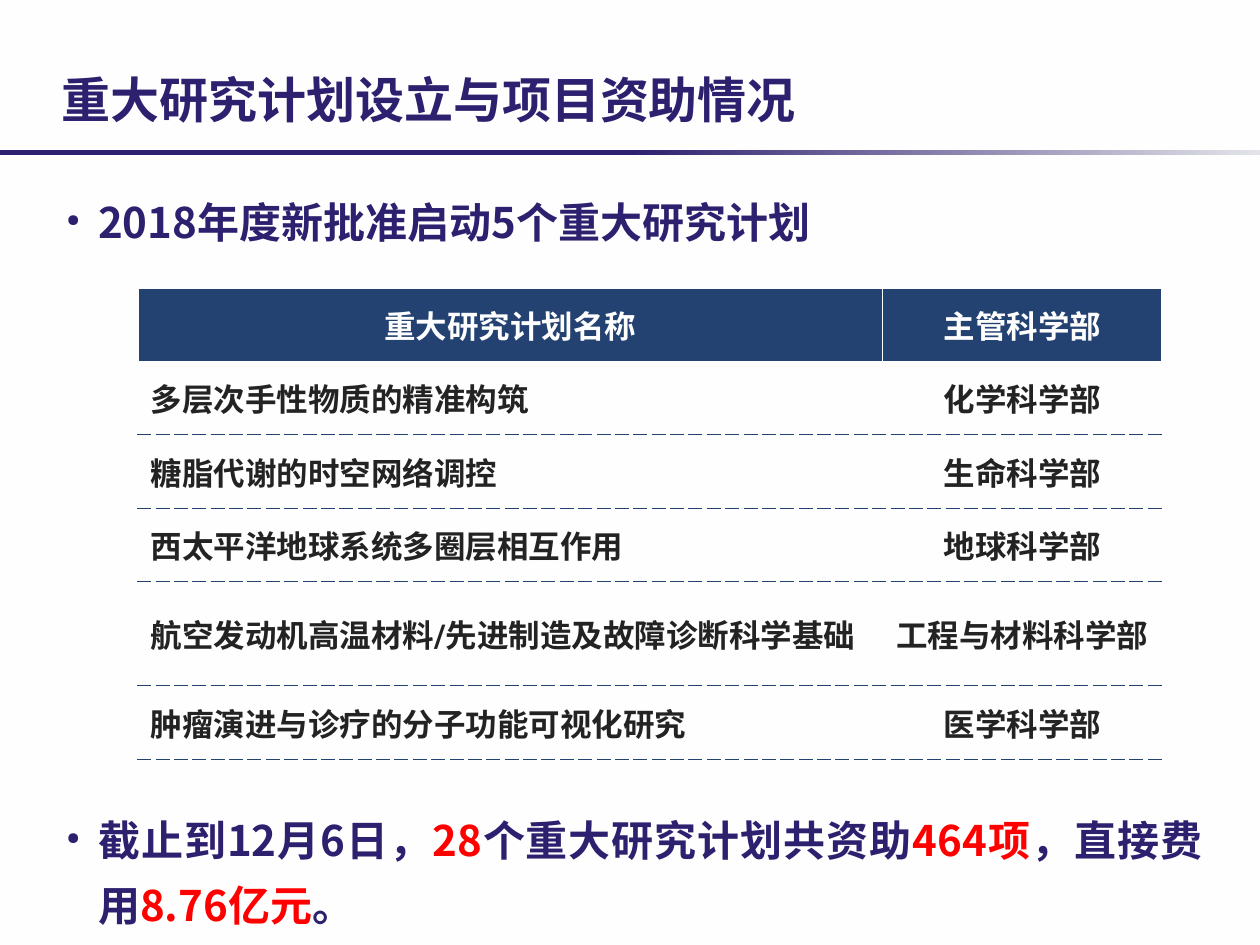
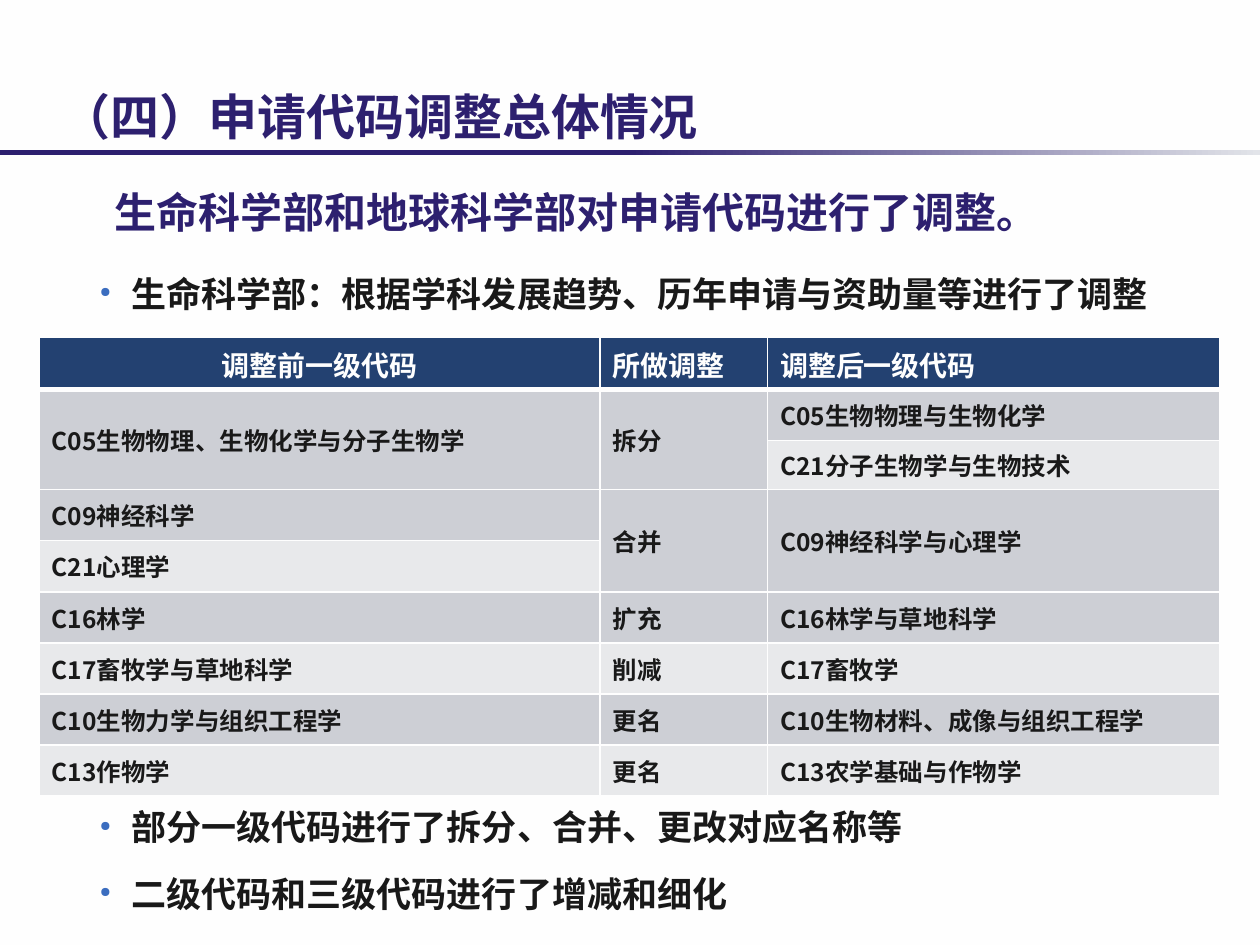
from dataclasses import dataclass

from lxml.etree import SubElement
from pptx import Presentation
from pptx.dml.color import RGBColor
from pptx.enum.shapes import MSO_SHAPE
from pptx.enum.text import MSO_ANCHOR, PP_ALIGN
from pptx.oxml.ns import qn
from pptx.util import Pt


@dataclass(frozen=True)
class Theme:
    paper: str = "FEFEFE"
    purple: str = "2D206F"
    band_end: str = "E2E4E9"
    navy: str = "234171"
    red: str = "FF0000"
    blue: str = "3B6DBF"
    ink: str = "191919"
    plan_ink: str = "232323"
    stripe_dark: str = "CDCFD5"
    stripe_light: str = "E8E9EB"
    font: str = "Noto Sans CJK SC"
    table_font: str = "Roboto"
    title_size: int = 28
    lead_size: int = 24
    point_size: int = 20
    plan_size: int = 18
    code_header_size: int = 16
    code_size: int = 14
    lead_spacing: float = 1.3
    point_spacing: float = 1.25


THEME = Theme()
LEFT, WIDTH = 31, 663

PLANS = [
    ("重大研究计划名称", "主管科学部"),
    ("多层次手性物质的精准构筑", "化学科学部"),
    ("糖脂代谢的时空网络调控", "生命科学部"),
    ("西太平洋地球系统多圈层相互作用", "地球科学部"),
    ("航空发动机高温材料/先进制造及故障诊断科学基础", "工程与材料科学部"),
    ("肿瘤演进与诊疗的分子功能可视化研究", "医学科学部"),
]
TWO_LINE_PLAN = 4

# None continues the cell above.
CODES = [
    ("调整前一级代码", "所做调整", "调整后一级代码"),
    ("C05生物物理、生物化学与分子生物学", "拆分", "C05生物物理与生物化学"),
    (None, None, "C21分子生物学与生物技术"),
    ("C09神经科学", "合并", "C09神经科学与心理学"),
    ("C21心理学", None, None),
    ("C16林学", "扩充", "C16林学与草地科学"),
    ("C17畜牧学与草地科学", "削减", "C17畜牧学"),
    ("C10生物力学与组织工程学", "更名", "C10生物材料、成像与组织工程学"),
    ("C13作物学", "更名", "C13农学基础与作物学"),
]


def rgb(color):
    return RGBColor.from_string(color)


def add_bullet(para, color, indent):
    """Hang a small round bullet 18 pt before the text at indent."""
    properties = para._p.get_or_add_pPr()
    properties.set("marL", str(Pt(indent)))
    properties.set("indent", str(Pt(-18)))
    bullet_color = SubElement(properties, qn("a:buClr"))
    SubElement(bullet_color, qn("a:srgbClr"), val=color)
    SubElement(properties, qn("a:buSzPct"), val="40000")
    SubElement(properties, qn("a:buChar"), char="●")


def write(para, text, *, size, color=THEME.ink, font=THEME.font,
          align=PP_ALIGN.LEFT, spacing=None, before=0):
    """Fill a paragraph with text, or with (text, color) spans."""
    para.alignment = align
    para.space_before = Pt(before)
    if spacing:
        para.line_spacing = spacing
    spans = [(text, color)] if isinstance(text, str) else text
    for words, span_color in spans:
        span = para.add_run()
        span.text = words
        span.font.size = Pt(size)
        span.font.bold = True
        span.font.color.rgb = rgb(span_color)
        span.font.name = font
        SubElement(span._r.get_or_add_rPr(), qn("a:ea"), typeface=THEME.font)


def add_box(page, top, height, left=LEFT, width=WIDTH):
    box = page.shapes.add_textbox(Pt(left), Pt(top), Pt(width), Pt(height))
    box.text_frame.word_wrap = True
    return box.text_frame


def add_bullets(page, top, height, items, *, bullet, indent, **style):
    frame = add_box(page, top, height)
    for index, item in enumerate(items):
        para = frame.add_paragraph() if index else frame.paragraphs[0]
        add_bullet(para, bullet, indent)
        write(para, item, align=PP_ALIGN.JUSTIFY, before=8 if index else 0, **style)


def add_page(deck, title, title_bottom):
    """Add a page with its background, title and gradient band."""
    page = deck.slides.add_slide(deck.slide_layouts[6])
    page.background.fill.solid()
    page.background.fill.fore_color.rgb = rgb(THEME.paper)

    band = page.shapes.add_shape(MSO_SHAPE.RECTANGLE, 0, Pt(85.7), deck.slide_width, Pt(2.9))
    band.shadow.inherit = False
    band.line.fill.background()
    band.fill.gradient()
    band.fill.gradient_angle = 0
    stops = zip(band.fill.gradient_stops, (0.5, 1), (THEME.purple, THEME.band_end))
    for stop, position, color in stops:
        stop.position = position
        stop.color.rgb = rgb(color)

    frame = add_box(page, title_bottom - 64, 64)
    frame.vertical_anchor = MSO_ANCHOR.BOTTOM
    frame.margin_left = frame.margin_right = Pt(4.3)
    frame.margin_top = frame.margin_bottom = 0
    write(frame.paragraphs[0], title, size=THEME.title_size, color=THEME.purple)
    return page


def set_border(cell, side, color, width=1, dash="solid"):
    line = SubElement(cell._tc.get_or_add_tcPr(), qn(f"a:ln{side}"), w=str(Pt(width)))
    fill = SubElement(line, qn("a:solidFill"))
    SubElement(fill, qn("a:srgbClr"), val=color)
    SubElement(line, qn("a:prstDash"), val=dash)


def paint_cell(cell, fill, **edges):
    """Draw the four borders, plain unless given in edges, then the fill."""
    for side in "LRTB":
        set_border(cell, side, **edges.get(side, {"color": THEME.paper}))
    cell.fill.solid()
    cell.fill.fore_color.rgb = rgb(fill)
    cell.vertical_anchor = MSO_ANCHOR.MIDDLE


def add_grid(page, left, top, widths, heights):
    frame = page.shapes.add_table(len(heights), len(widths), Pt(left), Pt(top),
                                  Pt(sum(widths)), Pt(sum(heights)))
    table = frame.table
    table.horz_banding = False
    for column, width in zip(table.columns, widths):
        column.width = Pt(width)
    for row, height in zip(table.rows, heights):
        row.height = Pt(height)
    return table


def add_plan_table(page):
    heights = [42] * len(PLANS)
    heights[TWO_LINE_PLAN] = 59.5
    table = add_grid(page, 78.8, 164.5, (425.5, 159.8), heights)
    dashed = {"color": THEME.navy, "width": 0.75, "dash": "sysDash"}
    for r, plan in enumerate(PLANS):
        edges = {"B": dashed} if r else {}
        if r > 1:
            edges["T"] = dashed
        for c, text in enumerate(plan):
            cell = table.cell(r, c)
            paint_cell(cell, THEME.paper if r else THEME.navy, **edges)
            write(cell.text_frame.paragraphs[0], text, size=THEME.plan_size,
                  color=THEME.plan_ink if r else THEME.paper,
                  font=THEME.table_font if r and not c else THEME.font,
                  align=PP_ALIGN.JUSTIFY if r and not c else PP_ALIGN.CENTER)


def add_code_table(page):
    heights = [29.2] * len(CODES)
    heights[0], heights[2] = 29.8, 28
    table = add_grid(page, 22.4, 192.8, (320.5, 95.8, 258.5), heights)
    heavy = {"color": THEME.paper, "width": 3}
    stripes = (THEME.stripe_light, THEME.stripe_dark)
    for r, codes in enumerate(CODES):
        for c, text in enumerate(codes):
            cell = table.cell(r, c)
            if r == 0:
                paint_cell(cell, THEME.navy, B=heavy)
                style = {"size": THEME.code_header_size, "color": THEME.paper,
                         "font": THEME.table_font,
                         "align": PP_ALIGN.LEFT if c else PP_ALIGN.CENTER}
            else:
                paint_cell(cell, stripes[r % 2], **({"T": heavy} if r == 1 else {}))
                style = {"size": THEME.code_size}
            if text is None:
                table.cell(r - 1, c).merge(cell)
            else:
                write(cell.text_frame.paragraphs[0], text, **style)


def add_plans_page(deck):
    page = add_page(deck, "重大研究计划设立与项目资助情况", 73.4)
    lead = {"bullet": THEME.purple, "indent": 18, "size": THEME.lead_size,
            "color": THEME.purple, "spacing": THEME.lead_spacing}
    add_bullets(page, 100, 45, ["2018年度新批准启动5个重大研究计划"], **lead)
    add_plan_table(page)
    funding = [
        ("截止到12月6日，", THEME.purple), ("28", THEME.red),
        ("个重大研究计划共资助", THEME.purple), ("464项", THEME.red),
        ("，直接费用", THEME.purple), ("8.76亿元", THEME.red), ("。", THEME.purple),
    ]
    add_bullets(page, 453, 83, [funding], **lead)


def add_codes_page(deck):
    page = add_page(deck, "（四）申请代码调整总体情况", 82.8)
    point = {"bullet": THEME.blue, "indent": 37, "size": THEME.point_size,
             "spacing": THEME.point_spacing}
    add_bullets(page, 146.2, 37,
                ["生命科学部：根据学科发展趋势、历年申请与资助量等进行了调整"], **point)
    add_code_table(page)
    add_bullets(page, 451, 76, ["部分一级代码进行了拆分、合并、更改对应名称等",
                                "二级代码和三级代码进行了增减和细化"], **point)
    lead = add_box(page, 94.3, 45, left=58.5, width=635)
    write(lead.paragraphs[0], "生命科学部和地球科学部对申请代码进行了调整。",
          size=THEME.lead_size, color=THEME.purple, spacing=THEME.lead_spacing)


def main():
    deck = Presentation()
    deck.slide_width, deck.slide_height = Pt(720), Pt(540)
    add_plans_page(deck)
    add_codes_page(deck)
    deck.save("out.pptx")


if __name__ == "__main__":
    main()
